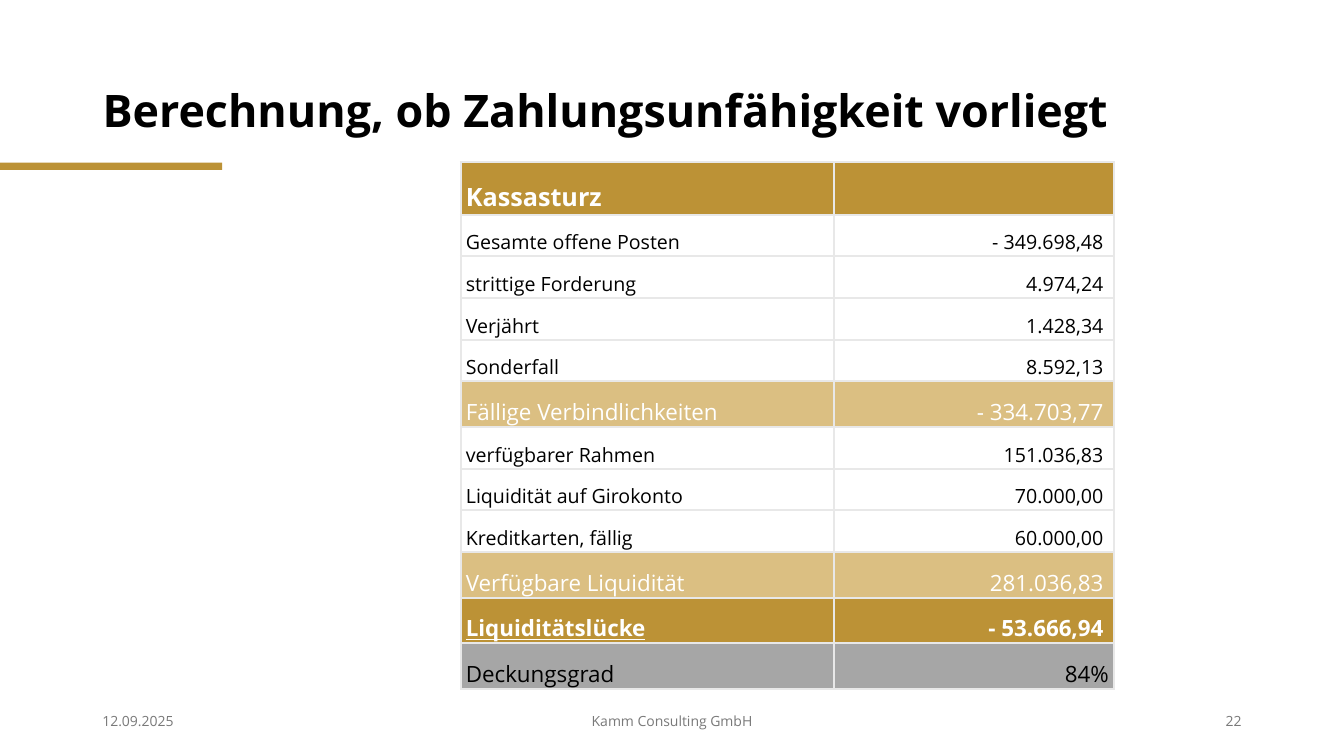
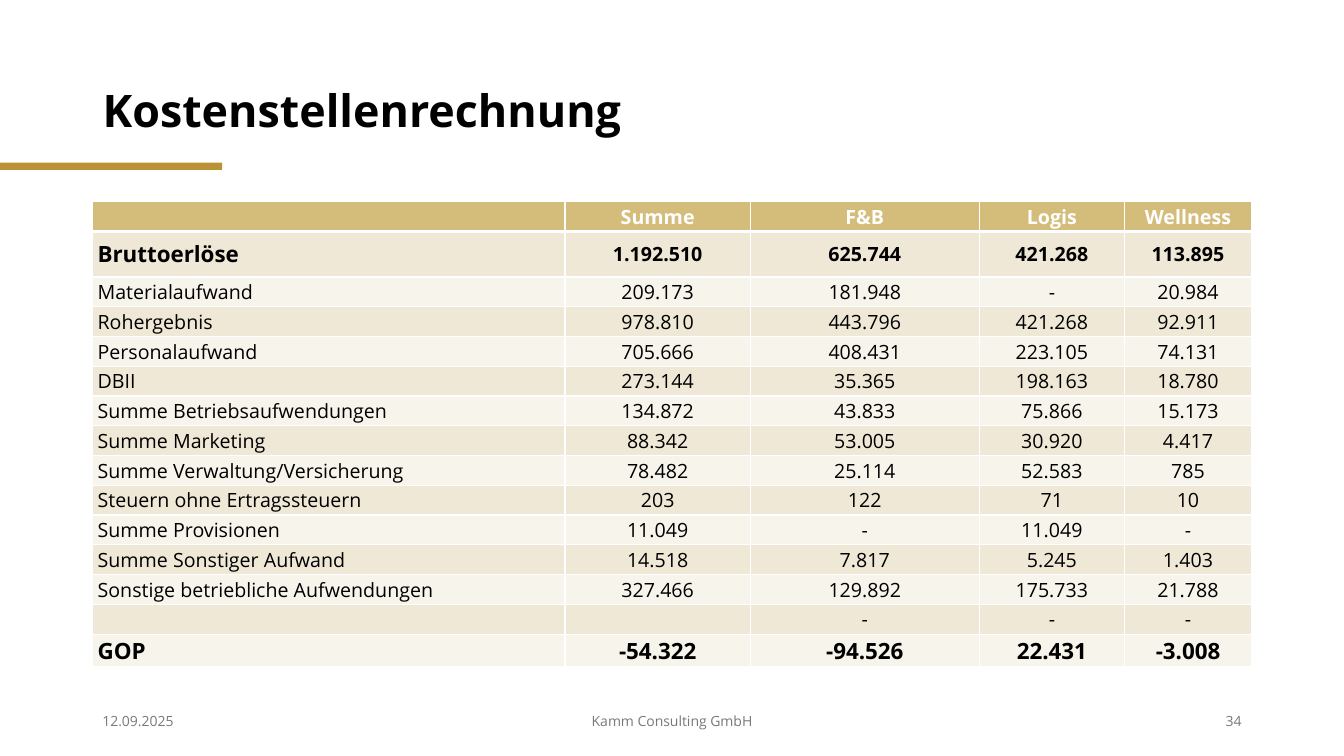
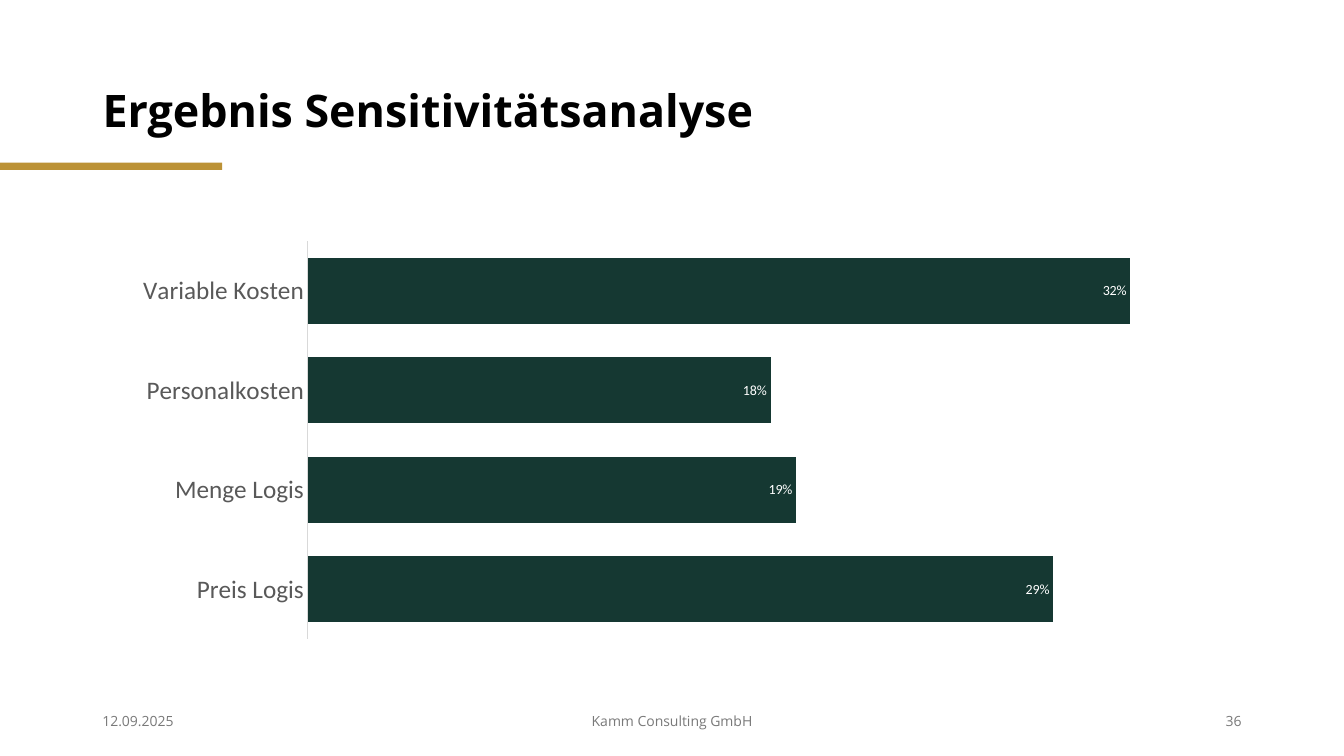
"""Build three slides on liquidity, cost centres and sensitivity."""
from lxml import etree
from pptx import Presentation
from pptx import util as u
from pptx.chart import data as cd
from pptx.dml import color
from pptx.enum import chart as ec, shapes, text
from pptx.oxml import ns

GOLD, SAND, HEAD, GREY = "BC9236", "DBBF82", "D4BD7B", "A6A6A6"
BANDS = ("EFE8D7", "F7F4EC")
BLACK, WHITE, MUTED = "000000", "FFFFFF", "797979"
LEFT, CENTER, RIGHT = text.PP_ALIGN.LEFT, text.PP_ALIGN.CENTER, text.PP_ALIGN.RIGHT


def rgb(value):
    """Turn a hex string into a colour."""
    return color.RGBColor.from_string(value)


def assign(obj, **values):
    """Set several attributes of one object."""
    for name, value in values.items():
        setattr(obj, name, value)


def style(font, hexa=BLACK, size=14, name="Open Sans", **values):
    """Format a font."""
    assign(font, name=name, size=u.Pt(size), **values)
    font.color.rgb = rgb(hexa)


def border(cell, hexa, **widths):
    """Draw the four edges of a cell, widths in points."""
    tc_pr = cell._tc.get_or_add_tcPr()
    for side in ("lnL", "lnR", "lnT", "lnB"):
        width = widths.get(side, widths["base"])
        ln = etree.SubElement(tc_pr, ns.qn("a:" + side), w=str(u.Pt(width)))
        fill = etree.SubElement(ln, ns.qn("a:solidFill"))
        etree.SubElement(fill, ns.qn("a:srgbClr"), val=hexa)


class Deck:
    """Hold the presentation, its style and the current slide."""

    def __init__(self):
        """Start a wide presentation."""
        self.prs = Presentation()
        assign(self.prs, slide_width=u.Cm(33.87), slide_height=u.Cm(19.05))

    def slide(self, title, number):
        """Add a slide with its title, accent bar and footer."""
        self.s = self.prs.slides.add_slide(self.prs.slide_layouts[5])
        sp = self.s.shapes.title
        assign(sp, left=u.Cm(2.33), top=u.Cm(1.01), width=u.Cm(29.21), height=u.Cm(3.68))
        self.fill_text(sp.text_frame, title, LEFT, size=32, bold=True)
        sp.text_frame.paragraphs[0].line_spacing = 0.9
        self.bar()
        self.label(2.33, 7.62, "12.09.2025", LEFT)
        self.label(11.22, 11.43, "Kamm Consulting GmbH", CENTER)
        self.label(23.92, 7.62, str(number), RIGHT)

    def fill_text(self, tf, words, align, **fmt):
        """Fill a text frame with one formatted paragraph."""
        assign(tf, word_wrap=True, auto_size=text.MSO_AUTO_SIZE.NONE,
               vertical_anchor=text.MSO_ANCHOR.MIDDLE)
        p = tf.paragraphs[0]
        p.alignment = align
        r = p.add_run()
        r.text = words
        style(r.font, **fmt)

    def bar(self):
        """Add the accent bar at the left edge."""
        sp = self.s.shapes.add_shape(shapes.MSO_SHAPE.RECTANGLE, 0, u.Cm(4.1), u.Cm(5.6), u.Cm(0.18))
        sp.shadow.inherit = False
        sp.fill.solid()
        sp.fill.fore_color.rgb = rgb(GOLD)
        sp.line.fill.background()

    def label(self, left, width, words, align):
        """Add one footer text."""
        sp = self.s.shapes.add_textbox(u.Cm(left), u.Cm(17.65), u.Cm(width), u.Cm(1.01))
        self.fill_text(sp.text_frame, words, align, hexa=MUTED, size=10)

    def table(self, left, top, widths, rows, align, margins, edge, spacing=1.0, head_rule=None):
        """Add a table of rows (height, fill, format, first cell format, texts)."""
        frame = self.s.shapes.add_table(len(rows), len(widths), u.Cm(left), u.Cm(top),
                                        u.Cm(sum(widths)), u.Cm(sum(row[0] for row in rows)))
        tbl = frame.table
        assign(tbl, first_row=False, horz_banding=False)
        for col, width in zip(tbl.columns, widths):
            col.width = u.Cm(width)
        for i, (height, fill, fmt, lead, words) in enumerate(rows):
            tbl.rows[i].height = u.Cm(height)
            rule = {0: {"lnB": head_rule}, 1: {"lnT": head_rule}}.get(i, {}) if head_rule else {}
            for j, word in enumerate(words):
                cell = tbl.cell(i, j)
                border(cell, edge[0], base=edge[1], **rule)
                self.cell(cell, word, align if j else LEFT, fill, fmt if j else {**fmt, **lead})
                cell.text_frame.paragraphs[0].line_spacing = spacing
                first, last = margins[min(j, 1)]
                assign(cell, margin_left=u.Cm(first), margin_right=u.Cm(last),
                       margin_top=0, margin_bottom=0)
        return tbl

    def cell(self, cell, word, align, fill, fmt):
        """Fill one table cell."""
        cell.vertical_anchor = text.MSO_ANCHOR.MIDDLE
        if fill:
            cell.fill.solid()
            cell.fill.fore_color.rgb = rgb(fill)
        else:
            cell.fill.background()
        p = cell.text_frame.paragraphs[0]
        p.alignment = align
        if word:
            r = p.add_run()
            r.text = word
            style(r.font, **fmt)
        else:
            etree.SubElement(p._p, ns.qn("a:endParaRPr"), sz="1200")

    def bars(self, left, top, width, height, values):
        """Add a horizontal bar chart of shares."""
        data = cd.CategoryChartData(number_format="0%")
        data.categories = list(values)
        data.add_series("Series 1", list(values.values()))
        chart = self.s.shapes.add_chart(ec.XL_CHART_TYPE.BAR_CLUSTERED, u.Cm(left), u.Cm(top),
                                        u.Cm(width), u.Cm(height), data).chart
        assign(chart, has_legend=False, has_title=False)
        style(chart.font, size=10, name="Calibri")
        assign(chart.value_axis, visible=False, has_major_gridlines=False,
               minimum_scale=0, maximum_scale=0.35)
        axis = chart.category_axis
        assign(axis, major_tick_mark=ec.XL_TICK_MARK.NONE, has_major_gridlines=False)
        style(axis.tick_labels.font, "595959", 18, "Calibri")
        axis.format.line.color.rgb = rgb("D9D9D9")
        axis.format.line.width = u.Pt(0.75)
        plot = chart.plots[0]
        assign(plot, gap_width=50, vary_by_categories=False, has_data_labels=True)
        assign(plot.data_labels, show_value=True, number_format="0%", number_format_is_linked=False,
               position=ec.XL_LABEL_POSITION.INSIDE_END)
        style(plot.data_labels.font, WHITE, 10, "Calibri")
        fill = plot.series[0].format.fill
        fill.solid()
        fill.fore_color.rgb = rgb("153832")


def liquidity(deck):
    """Add the insolvency test."""
    deck.slide("Berechnung, ob Zahlungsunfähigkeit vorliegt", 22)
    item = (1.05, None, {}, {})
    subtotal = (1.15, SAND, {"hexa": WHITE, "size": 16}, {})
    rows = [
        (1.32, GOLD, {"hexa": WHITE, "size": 18, "bold": True}, {}, ("Kassasturz", "")),
        (*item, ("Gesamte offene Posten", "- 349.698,48")),
        (*item, ("strittige Forderung", "4.974,24")),
        (*item, ("Verjährt", "1.428,34")),
        (*item, ("Sonderfall", "8.592,13")),
        (*subtotal, ("Fällige Verbindlichkeiten", "- 334.703,77")),
        (*item, ("verfügbarer Rahmen", "151.036,83")),
        (*item, ("Liquidität auf Girokonto", "70.000,00")),
        (*item, ("Kreditkarten, fällig", "60.000,00")),
        (*subtotal, ("Verfügbare Liquidität", "281.036,83")),
        (1.15, GOLD, {"hexa": WHITE, "size": 16, "bold": True}, {"underline": True},
         ("Liquiditätslücke", "- 53.666,94")),
        (1.15, GREY, {"size": 16}, {}, ("Deckungsgrad", "84%")),
    ]
    tbl = deck.table(11.61, 4.09, (9.4, 7.06), rows, RIGHT, ((0.13, 0.13), (0.13, 0.26)),
                     ("E8E8E8", 1.5), spacing=1.5)
    tbl.cell(len(rows) - 1, 1).margin_right = u.Cm(0.13)


def cost_centres(deck):
    """Add the cost centre table."""
    deck.slide("Kostenstellenrechnung", 34)
    body = [
        ("Bruttoerlöse", "1.192.510", "625.744", "421.268", "113.895"),
        ("Materialaufwand", "209.173", "181.948", "-", "20.984"),
        ("Rohergebnis", "978.810", "443.796", "421.268", "92.911"),
        ("Personalaufwand", "705.666", "408.431", "223.105", "74.131"),
        ("DBII", "273.144", "35.365", "198.163", "18.780"),
        ("Summe Betriebsaufwendungen", "134.872", "43.833", "75.866", "15.173"),
        ("Summe Marketing", "88.342", "53.005", "30.920", "4.417"),
        ("Summe Verwaltung/Versicherung", "78.482", "25.114", "52.583", "785"),
        ("Steuern ohne Ertragssteuern", "203", "122", "71", "10"),
        ("Summe Provisionen", "11.049", "-", "11.049", "-"),
        ("Summe Sonstiger Aufwand", "14.518", "7.817", "5.245", "1.403"),
        ("Sonstige betriebliche Aufwendungen", "327.466", "129.892", "175.733", "21.788"),
        ("", "", "-", "-", "-"),
        ("GOP", "-54.322", "-94.526", "22.431", "-3.008"),
    ]
    special = {
        "Bruttoerlöse": (1.15, {"bold": True}, {"size": 16}),
        "GOP": (0.82, {"bold": True, "size": 16}, {}),
    }
    rows = [(0.75, HEAD, {"hexa": WHITE, "bold": True}, {},
             ("", "Summe", "F&B", "Logis", "Wellness"))]
    for i, words in enumerate(body):
        height, fmt, lead = special.get(words[0], (0.75, {}, {}))
        rows.append((height, BANDS[i % 2], fmt, lead, words))
    deck.table(2.33, 5.08, (11.91, 4.67, 5.77, 3.66, 3.2), rows, CENTER, ((0.13, 0), (0, 0)),
               (WHITE, 1), head_rule=3)


def sensitivity(deck):
    """Add the sensitivity chart."""
    deck.slide("Ergebnis Sensitivitätsanalyse", 36)
    deck.bars(3.05, 5.87, 27.94, 10.44, {
        "Preis Logis": 0.29, "Menge Logis": 0.19, "Personalkosten": 0.18, "Variable Kosten": 0.32})


def main():
    """Build and save the deck."""
    deck = Deck()
    for build in (liquidity, cost_centres, sensitivity):
        build(deck)
    deck.prs.save("out.pptx")


if __name__ == "__main__":
    main()
